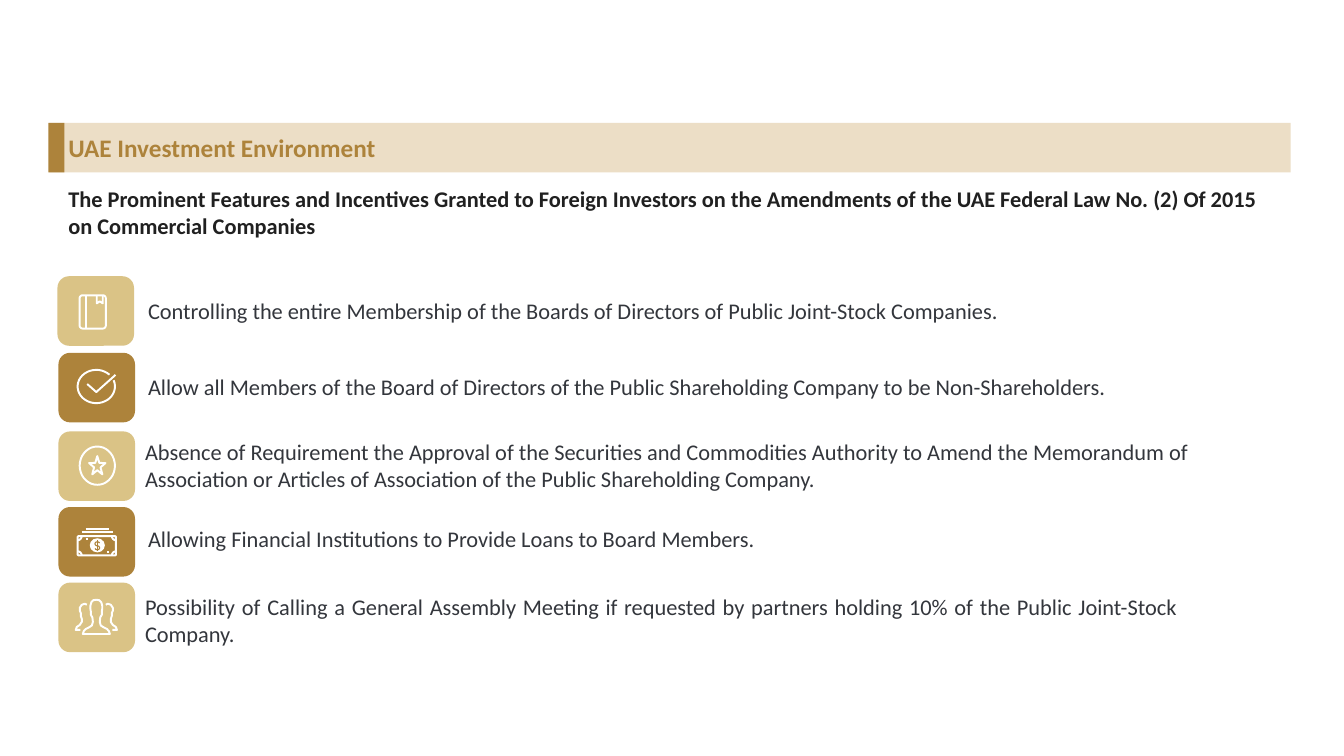
from math import cos, radians, sin

from pptx import Presentation
from pptx.dml.color import RGBColor
from pptx.enum.shapes import MSO_SHAPE as Preset
from pptx.enum.text import MSO_AUTO_SIZE as AutoSize, PP_ALIGN as Align
from pptx.util import Inches, Pt

GOLD, SAND, CREAM, WHITE = "AD833B", "DAC386", "ECDEC6", "FFFFFF"
BLACK, GREY = "202020", "33363C"


def color(value):
    return RGBColor.from_string(value)


def arc(cx, cy, rx, ry, start=0, end=360, steps=36):
    """Points of an elliptical arc, clockwise from the right."""
    angles = [radians(start + (end - start) * i / steps) for i in range(steps + 1)]
    return [(cx + rx * cos(a), cy + ry * sin(a)) for a in angles]


def mirror(points, axis):
    return [(2 * axis - x, y) for x, y in points]


def rounded(left, top, right, bottom, radius):
    """Closed outline of a rectangle with round corners."""
    corners = [(right - radius, bottom - radius, 0), (left + radius, bottom - radius, 90),
               (left + radius, top + radius, 180), (right - radius, top + radius, 270)]
    points = [point for x, y, start in corners
              for point in arc(x, y, radius, radius, start, start + 90, 6)]
    return points + points[:1]


class SlideBuilder:
    font_name = "Calibri"

    def __init__(self, slide):
        self.shapes = slide.shapes

    def block(self, preset, left, top, width, height, fill):
        shape = self.shapes.add_shape(
            preset, Inches(left), Inches(top), Inches(width), Inches(height))
        shape.shadow.inherit = False
        shape.fill.solid()
        shape.fill.fore_color.rgb = color(fill)
        shape.line.fill.background()
        return shape

    def text(self, words, left, top, width, height, ink, size=16, bold=False,
             wrap=True, align=Align.LEFT):
        box = self.shapes.add_textbox(
            Inches(left), Inches(top), Inches(width), Inches(height))
        frame = box.text_frame
        frame.word_wrap = wrap
        frame.auto_size = AutoSize.SHAPE_TO_FIT_TEXT
        paragraph = frame.paragraphs[0]
        paragraph.alignment = align
        run = paragraph.add_run()
        run.text = words
        style = {"name": self.font_name, "size": Pt(size), "bold": bold}
        for name, value in style.items():
            setattr(run.font, name, value)
        run.font.color.rgb = color(ink)

    def strokes(self, lines, ink=WHITE, weight=1.4):
        """One freeform made of several open or closed lines, in inches."""
        builder = None
        for line in lines:
            start, *rest = [(x * 1000, y * 1000) for x, y in line]
            if builder is None:
                builder = self.shapes.build_freeform(*start, scale=Inches(1) / 1000)
            else:
                builder.move_to(*start)
            builder.add_line_segments(rest, close=False)
        shape = builder.convert_to_shape()
        shape.shadow.inherit = False
        shape.fill.background()
        shape.line.color.rgb = color(ink)
        shape.line.width = Pt(weight)


def draw_book(builder):
    bookmark = [(0.96, 2.93), (0.96, 3.01), (0.99, 2.99), (1.02, 3.01), (1.02, 2.93)]
    builder.strokes([rounded(0.79, 2.93, 1.05, 3.26, 0.03),
                     [(0.85, 2.93), (0.85, 3.26)], bookmark])


def draw_check(builder):
    builder.strokes([arc(0.955, 3.835, 0.185, 0.165, -22, 315),
                     [(0.865, 3.81), (0.955, 3.89), (1.145, 3.72)]])


def draw_star(builder):
    star = []
    for i in range(11):
        reach = 0.4 if i % 2 else 1
        angle = radians(36 * i - 90)
        star.append((0.965 + 0.085 * reach * cos(angle),
                     4.625 + 0.1 * reach * sin(angle)))
    builder.strokes([arc(0.965, 4.62, 0.175, 0.19), star])


def draw_money(builder):
    left, top, right, bottom = 0.77, 5.32, 1.15, 5.51
    corners = [(left, top, 0), (right, top, 90), (right, bottom, 180), (left, bottom, 270)]
    notches = [arc(x, y, 0.04, 0.04, start, start + 90, 8) for x, y, start in corners]
    dashes = [(0.81, 1.12, 5.28), (0.85, 1.08, 5.25), (0.85, 0.87, 5.35), (1.06, 1.08, 5.475)]
    builder.strokes([rounded(left, top, right, bottom, 0.01), *notches,
                     *[[(x1, y), (x2, y)] for x1, x2, y in dashes]])
    # Coin with its dollar sign
    builder.block(Preset.OVAL, 0.89, 5.34, 0.15, 0.14, WHITE)
    dollar = arc(0.965, 5.395, 0.023, 0.02, -20, -270, 12)
    dollar += arc(0.965, 5.435, 0.023, 0.02, -90, 160, 12)
    builder.strokes([dollar, [(0.965, 5.36), (0.965, 5.47)]], GOLD, 0.8)


def draw_people(builder):
    axis = 0.956
    half = [(0.956, 5.95), (0.985, 5.955), (1.005, 5.975), (1.015, 6.01), (1.015, 6.04),
            (1.01, 6.07), (1.01, 6.1), (0.995, 6.125), (0.99, 6.17), (1, 6.205),
            (1.03, 6.225), (1.06, 6.24), (1.08, 6.26), (1.09, 6.29)]
    neighbour = [(1.05, 6), (1.07, 5.99), (1.1, 6), (1.12, 6.03), (1.12, 6.06),
                 (1.11, 6.08), (1.11, 6.11), (1.1, 6.14), (1.1, 6.17), (1.12, 6.2),
                 (1.15, 6.22), (1.16, 6.25), (1.115, 6.25)]
    person = half + mirror(half, axis)[::-1]
    builder.strokes([person, neighbour, mirror(neighbour, axis)])


# Tile left and top, text box, icon, wording
FEATURES = [
    (0.57, 2.74, (1.37, 2.9, 8.75, 0.37), draw_book,
     "Controlling the entire Membership of the Boards of Directors of Public "
     "Joint-Stock Companies."),
    (0.58, 3.5, (1.37, 3.65, 9.75, 0.37), draw_check,
     "Allow all Members of the Board of Directors of the Public Shareholding Company "
     "to be Non-Shareholders."),
    (0.58, 4.28, (1.34, 4.3, 10.55, 0.64), draw_star,
     "Absence of Requirement the Approval of the Securities and Commodities Authority "
     "to Amend the Memorandum of Association or Articles of Association of the Public "
     "Shareholding Company."),
    (0.58, 5.03, (1.37, 5.16, 9.32, 0.37), draw_money,
     "Allowing Financial Institutions to Provide Loans to Board Members."),
    (0.58, 5.78, (1.34, 5.84, 10.44, 0.64), draw_people,
     "Possibility of Calling a General Assembly Meeting if requested by partners "
     "holding 10% of the Public Joint-Stock Company."),
]


def main():
    presentation = Presentation()
    presentation.slide_width = Inches(13.33)
    presentation.slide_height = Inches(7.5)
    slide = presentation.slides.add_slide(presentation.slide_layouts[6])
    builder = SlideBuilder(slide)

    # Title band
    builder.block(Preset.RECTANGLE, 0.49, 1.22, 12.31, 0.49, CREAM)
    builder.block(Preset.RECTANGLE, 0.48, 1.22, 0.16, 0.49, GOLD)
    builder.text("UAE Investment Environment", 0.58, 1.26, 3.33, 0.4, GOLD,
                 size=18, bold=True, wrap=False)
    builder.text("The Prominent Features and Incentives Granted to Foreign Investors on "
                 "the Amendments of the UAE Federal Law No. (2) Of 2015 on Commercial "
                 "Companies", 0.58, 1.79, 12.16, 0.64, BLACK, bold=True)

    # Features, each with a tile, an icon and a text
    for index, (left, top, text_box, draw_icon, words) in enumerate(FEATURES):
        builder.block(Preset.ROUNDED_RECTANGLE, left, top, 0.76, 0.69,
                      GOLD if index % 2 else SAND)
        draw_icon(builder)
        builder.text(words, *text_box, GREY, wrap=index > 0, align=Align.JUSTIFY)

    presentation.save("out.pptx")


if __name__ == "__main__":
    main()
